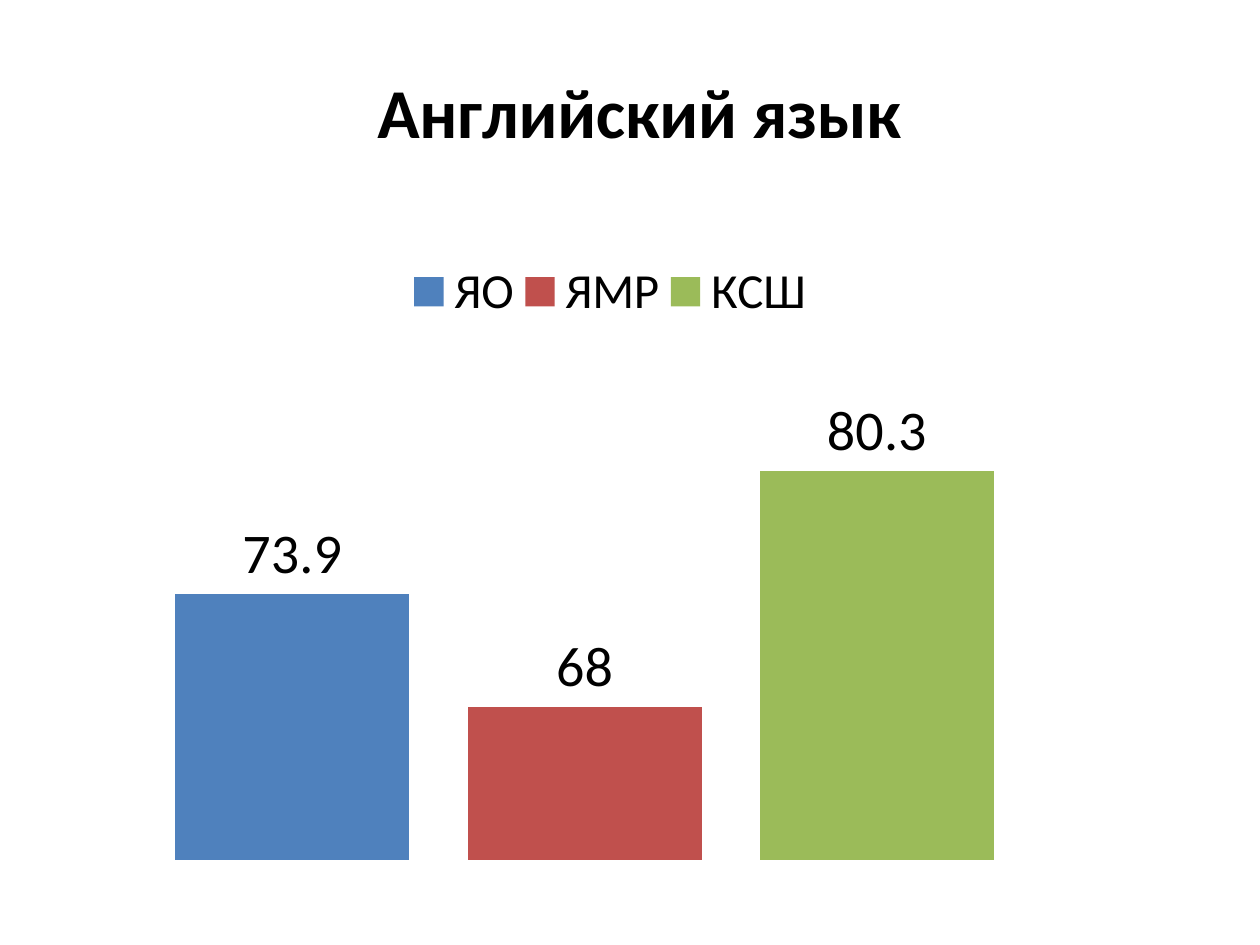
from lxml import etree
from pptx import Presentation
from pptx.chart.data import CategoryChartData
from pptx.dml.color import RGBColor
from pptx.enum.chart import XL_CHART_TYPE, XL_LABEL_POSITION, XL_LEGEND_POSITION
from pptx.oxml.ns import qn
from pptx.util import Inches, Pt

COLUMNS = XL_CHART_TYPE.COLUMN_CLUSTERED
OUTSIDE = XL_LABEL_POSITION.OUTSIDE_END
TOP = XL_LEGEND_POSITION.TOP

TITLE = "Английский язык"
FONT = "Calibri"
BLACK = "000000"
CATEGORIES = ["1"]
SCORES = [
    ("ЯО", 73.9, "4F81BD"),
    ("ЯМР", 68, "C0504D"),
    ("КСШ", 80.3, "9BBB59"),
]
AXIS_RANGE = (60, 85)
TITLE_PLACE = {"x": 0.29, "y": 0.05}
LEGEND_PLACE = {"x": 0.32, "y": 0.27, "w": 0.33, "h": 0.07}
PLOT_PLACE = {"x": 0, "y": 0.4, "w": 0.93, "h": 0.51}


def color(value):
    return RGBColor.from_string(value)


def style(font, size, bold=False):
    font.name = FONT
    font.size = Pt(size)
    font.bold = bold
    font.color.rgb = color(BLACK)


def place(parent, index, shares, inner=False):
    for old in parent.findall(qn("c:layout")):
        parent.remove(old)
    layout = etree.Element(qn("c:layout"))
    manual = etree.SubElement(layout, qn("c:manualLayout"))
    settings = [("layoutTarget", "inner")] if inner else []
    settings += [(axis + "Mode", "edge") for axis in "xy"]
    settings += shares.items()
    for name, value in settings:
        etree.SubElement(manual, qn("c:" + name)).set("val", str(value))
    parent.insert(index, layout)


deck = Presentation()
deck.slide_width, deck.slide_height = Inches(10), Inches(7.5)
page = deck.slides.add_slide(deck.slide_layouts[6])

data = CategoryChartData()
data.categories = CATEGORIES
for name, score, fill in SCORES:
    data.add_series(name, [score])
frame = page.shapes.add_chart(
    COLUMNS, 0, Inches(0.04), Inches(9.98), Inches(7.46), data)
chart = frame.chart
style(chart.font, 10)

chart.has_title = True
title = chart.chart_title
title.include_in_layout = False
span = title.text_frame.paragraphs[0].add_run()
span.text = TITLE
style(span.font, 40, bold=True)

chart.has_legend = True
legend = chart.legend
legend.position = TOP
legend.include_in_layout = False
style(legend.font, 28)

for axis in (chart.category_axis, chart.value_axis):
    axis.visible = False
    axis.has_major_gridlines = False
chart.value_axis.minimum_scale, chart.value_axis.maximum_scale = AXIS_RANGE

plot = chart.plots[0]
plot.gap_width = 150
plot.overlap = -25
plot.vary_by_categories = False
for series, (name, score, fill) in zip(plot.series, SCORES):
    series.format.fill.solid()
    series.format.fill.fore_color.rgb = color(fill)
    labels = series.data_labels
    labels.show_value = True
    labels.position = OUTSIDE
    style(labels.font, 32)

plot_area = chart.element.find(".//" + qn("c:plotArea"))
place(chart.element.find(".//" + qn("c:title")), 1, TITLE_PLACE)
place(chart.element.find(".//" + qn("c:legend")), 1, LEGEND_PLACE)
place(plot_area, 0, PLOT_PLACE, inner=True)

deck.save("out.pptx")
